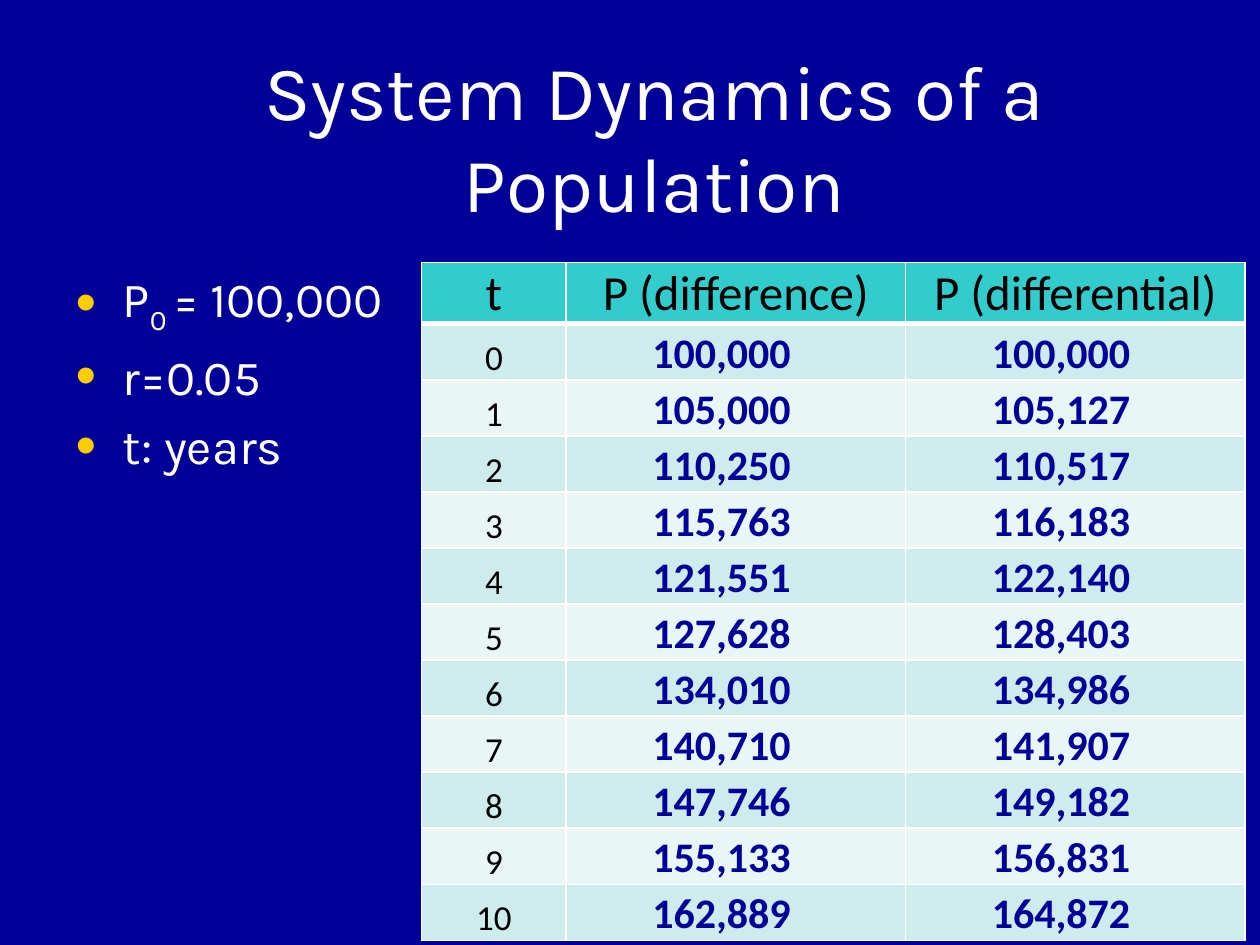
import pptx
import pptx.dml.color
import pptx.enum.text
import pptx.oxml
import pptx.oxml.ns
import pptx.util

Pt = pptx.util.Pt
RGBColor = pptx.dml.color.RGBColor
ALIGN = pptx.enum.text.PP_ALIGN
ANCHOR = pptx.enum.text.MSO_ANCHOR

NAVY = RGBColor(0x00, 0x00, 0x99)
VALUE_BLUE = RGBColor(0x01, 0x01, 0x99)
WHITE = RGBColor(0xFF, 0xFF, 0xFF)
BLACK = RGBColor(0x00, 0x00, 0x00)
GOLD = RGBColor(0xFF, 0xCC, 0x00)
TEAL = RGBColor(0x33, 0xCC, 0xCC)
BANDS = (RGBColor(0xCE, 0xEC, 0xEC), RGBColor(0xE8, 0xF6, 0xF6))

HEADINGS = ("t", "P (difference)", "P (differential)")
POPULATIONS = (
    ("100,000", "100,000"),
    ("105,000", "105,127"),
    ("110,250", "110,517"),
    ("115,763", "116,183"),
    ("121,551", "122,140"),
    ("127,628", "128,403"),
    ("134,010", "134,986"),
    ("140,710", "141,907"),
    ("147,746", "149,182"),
    ("155,133", "156,831"),
    ("162,889", "164,872"),
)
# Each parameter is a list of (text, is_subscript) pieces.
PARAMETERS = (
    (("P", False), ("0 ", True), ("= 100,000", False)),
    (("r=0.05", False),),
    (("t: years", False),),
)


def xml(tag, content="", **attributes):
    settings = " ".join(f'{key}="{value}"' for key, value in attributes.items())
    namespace = pptx.oxml.ns.nsdecls("a")
    return pptx.oxml.parse_xml(f"<a:{tag} {namespace} {settings}>{content}</a:{tag}>")


class PopulationSlide:
    text_font = "Karla"
    table_font = "Calibri"

    def __init__(self, presentation):
        self.slide = presentation.slides.add_slide(presentation.slide_layouts[1])
        background = self.slide.background.fill
        background.solid()
        background.fore_color.rgb = NAVY

    def style(self, paragraph, name, size, color, bold=False):
        font = paragraph.font
        font.name, font.size, font.bold = name, Pt(size), bold
        font.color.rgb = color

    def place(self, placeholder, left, top, width, height):
        placeholder.left, placeholder.top = Pt(left), Pt(top)
        placeholder.width, placeholder.height = Pt(width), Pt(height)
        placeholder.text_frame.auto_size = pptx.enum.text.MSO_AUTO_SIZE.NONE
        return placeholder.text_frame

    def title(self, text, *box):
        frame = self.place(self.slide.shapes.title, *box)
        frame.vertical_anchor = ANCHOR.MIDDLE
        frame.text = text
        heading = frame.paragraphs[0]
        heading.alignment = ALIGN.CENTER
        self.style(heading, self.text_font, 44, WHITE)

    def bullets(self, items, *box):
        frame = self.place(self.slide.placeholders[1], *box)
        for index, pieces in enumerate(items):
            item = frame.add_paragraph() if index else frame.paragraphs[0]
            self.add_bullet(item)
            item.space_before = Pt(6 if index else 0)
            for text, is_subscript in pieces:
                run = item.add_run()
                run.text = text
                if is_subscript:
                    run.font._element.set("baseline", "-25000")
            self.style(item, self.text_font, 28, WHITE)

    def add_bullet(self, paragraph):
        properties = paragraph._p.get_or_add_pPr()
        properties.set("marL", str(Pt(27)))
        properties.set("indent", str(-Pt(27)))
        properties.append(xml("buClr", f'<a:srgbClr val="{GOLD}"/>'))
        properties.append(xml("buSzPct", val=120000))
        properties.append(xml("buFont", typeface="Arial"))
        properties.append(xml("buChar", char="•"))

    def table(self, headings, records, left, top, widths, header_height, row_height):
        rows = [headings] + [(str(t), *values) for t, values in enumerate(records)]
        height = header_height + row_height * len(records)
        table = self.slide.shapes.add_table(
            len(rows), len(headings), Pt(left), Pt(top), Pt(sum(widths)), Pt(height)
        ).table
        table.first_row = table.horz_banding = False
        for column, width in zip(table.columns, widths):
            column.width = Pt(width)
        for r, texts in enumerate(rows):
            table.rows[r].height = Pt(row_height if r else header_height)
            for c, text in enumerate(texts):
                self.fill_cell(table.cell(r, c), text, r, c)

    def fill_cell(self, cell, text, row, column):
        is_value = row > 0 and column > 0
        cell.vertical_anchor = ANCHOR.BOTTOM
        cell.margin_left = cell.margin_top = Pt(0.7)
        cell.margin_right = Pt(17 if is_value else 0.7)
        cell.margin_bottom = Pt(0)
        cell.text = text
        entry = cell.text_frame.paragraphs[0]
        entry.alignment = ALIGN.CENTER
        if is_value:
            entry.line_spacing = 1.07
            entry.space_after = Pt(8)
            self.style(entry, self.table_font, 24, VALUE_BLUE, bold=True)
        else:
            self.style(entry, self.table_font, 20 if row else 28, BLACK)
        cell.fill.solid()
        cell.fill.fore_color.rgb = BANDS[(row - 1) % 2] if row else TEAL
        self.add_borders(cell, top=3 if row == 1 else 1, bottom=1 if row else 3)

    def add_borders(self, cell, top, bottom):
        properties = cell._tc.get_or_add_tcPr()
        line = f'<a:solidFill><a:srgbClr val="{WHITE}"/></a:solidFill>'
        sides = (("lnL", 1), ("lnR", 1), ("lnT", top), ("lnB", bottom))
        for position, (side, width) in enumerate(sides):
            properties.insert(position, xml(side, line, w=int(Pt(width))))


def main():
    presentation = pptx.Presentation()
    presentation.slide_width, presentation.slide_height = Pt(720), Pt(540)
    page = PopulationSlide(presentation)
    page.title("System Dynamics of a Population", 127.5, 23, 493, 109)
    page.bullets(PARAMETERS, 36, 150, 318, 324)
    page.table(HEADINGS, POPULATIONS, 241, 150, (82.5, 194, 194), 35, 31)
    presentation.save("out.pptx")


if __name__ == "__main__":
    main()
